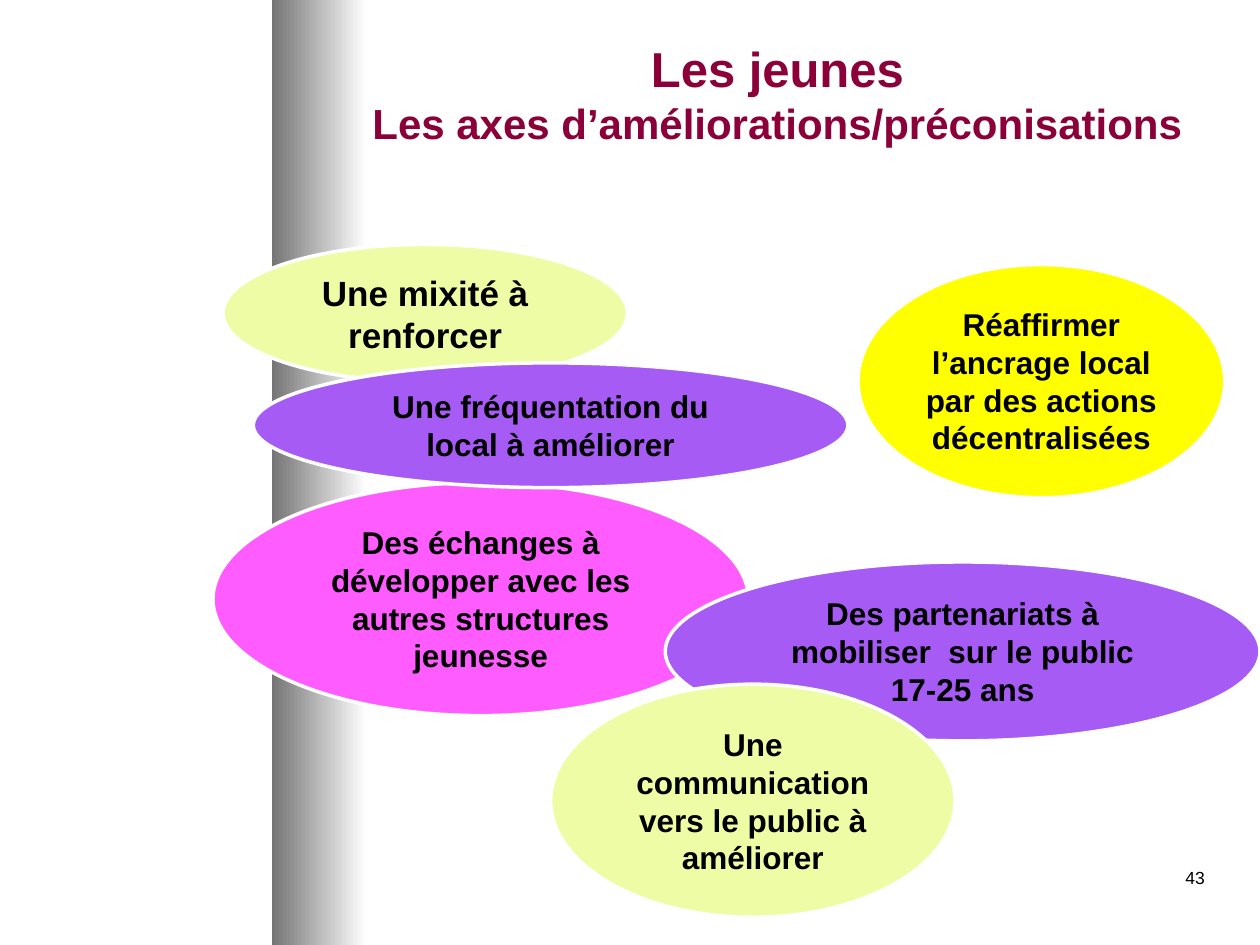
from dataclasses import dataclass

from pptx import Presentation
from pptx.dml.color import RGBColor
from pptx.enum.shapes import MSO_SHAPE
from pptx.enum.text import MSO_ANCHOR, PP_ALIGN
from pptx.util import Inches, Pt

RECTANGLE, ELLIPSE = MSO_SHAPE.RECTANGLE, MSO_SHAPE.OVAL
TOP, MIDDLE = MSO_ANCHOR.TOP, MSO_ANCHOR.MIDDLE
CENTER, RIGHT = PP_ALIGN.CENTER, PP_ALIGN.RIGHT

SLIDE_WIDTH, SLIDE_HEIGHT = Inches(10), Inches(7.5)
COLUMNS, ROWS = 100, 75


@dataclass(frozen=True)
class Theme:
    font: str = "Arial"
    text: str = "000000"
    title: str = "8C0039"
    white: str = "FFFFFF"
    band: str = "757575"
    lime: str = "EEFDA5"
    pink: str = "FF5CFF"
    violet: str = "A65BF4"
    yellow: str = "FFFF00"
    title_size: int = 28
    subtitle_size: int = 24
    large_size: int = 20
    body_size: int = 18
    number_size: int = 10
    outline: int = 2


THEME = Theme()

AXES = [
    ("Une mixité à renforcer",
     (17.7, 19.4, 32.1, 10.9), THEME.lime, THEME.large_size, MIDDLE),
    ("Des échanges à développer avec les autres structures jeunesse",
     (16.9, 38.3, 42.5, 18.5), THEME.pink, THEME.body_size, TOP),
    ("Une fréquentation du local à améliorer",
     (20.1, 28.8, 47.2, 9.9), THEME.violet, THEME.body_size, TOP),
    ("Des partenariats à mobiliser  sur le public 17-25 ans",
     (52.8, 44.6, 47.2, 14.2), THEME.violet, THEME.body_size, TOP),
    ("Réaffirmer l’ancrage local par des actions décentralisées",
     (68.1, 21, 29.1, 18.5), THEME.yellow, THEME.body_size, TOP),
    ("Une communication vers le public à améliorer",
     (43.7, 54.3, 32.1, 18.5), THEME.lime, THEME.body_size, MIDDLE),
]


def color(value):
    return RGBColor.from_string(value)


def grid_box(left, top, width, height):
    column, row = SLIDE_WIDTH / COLUMNS, SLIDE_HEIGHT / ROWS
    return (round(left * column), round(top * row),
            round(width * column), round(height * row))


def style_font(font, size, fill, bold):
    font.name = THEME.font
    font.size = Pt(size)
    font.bold = bold
    font.color.rgb = color(fill)


def prepare_paragraph(shape, anchor, alignment):
    frame = shape.text_frame
    frame.word_wrap = True
    frame.vertical_anchor = anchor
    paragraph = frame.paragraphs[0]
    paragraph.alignment = alignment
    return paragraph


def add_band(slide, box):
    shape = slide.shapes.add_shape(RECTANGLE, *grid_box(*box))
    shape.shadow.inherit = False
    shape.line.fill.background()
    shape.fill.gradient()
    shape.fill.gradient_angle = 0
    for stop, value, position in zip(shape.fill.gradient_stops,
                                     (THEME.band, THEME.white), (0, 1)):
        stop.color.rgb = color(value)
        stop.position = position


def add_title(slide, box, title, subtitle):
    shape = slide.shapes.add_textbox(*grid_box(*box))
    paragraph = prepare_paragraph(shape, MIDDLE, CENTER)
    style_font(paragraph.font, THEME.title_size, THEME.title, True)
    paragraph.add_run().text = title
    paragraph.add_line_break()
    run = paragraph.add_run()
    run.text = subtitle
    run.font.size = Pt(THEME.subtitle_size)


def add_slide_number(slide, box, number):
    shape = slide.shapes.add_textbox(*grid_box(*box))
    paragraph = prepare_paragraph(shape, TOP, RIGHT)
    paragraph.text = number
    style_font(paragraph.font, THEME.number_size, THEME.text, False)


def add_axis(slide, text, box, fill, size, anchor):
    shape = slide.shapes.add_shape(ELLIPSE, *grid_box(*box))
    shape.shadow.inherit = False
    shape.fill.solid()
    shape.fill.fore_color.rgb = color(fill)
    shape.line.color.rgb = color(THEME.white)
    shape.line.width = Pt(THEME.outline)
    paragraph = prepare_paragraph(shape, anchor, CENTER)
    paragraph.text = text
    style_font(paragraph.font, size, THEME.text, True)


def main():
    presentation = Presentation()
    presentation.slide_width = SLIDE_WIDTH
    presentation.slide_height = SLIDE_HEIGHT
    slide = presentation.slides.add_slide(presentation.slide_layouts[6])
    add_band(slide, (21.6, 0, 7.5, ROWS))
    add_slide_number(slide, (75.8, 68.3, 20.8, 5), "43")
    add_title(slide, (26.7, 2.5, 70, 9.8), "Les jeunes",
              "Les axes d’améliorations/préconisations")
    for axis in AXES:
        add_axis(slide, *axis)
    presentation.save("out.pptx")


if __name__ == "__main__":
    main()
